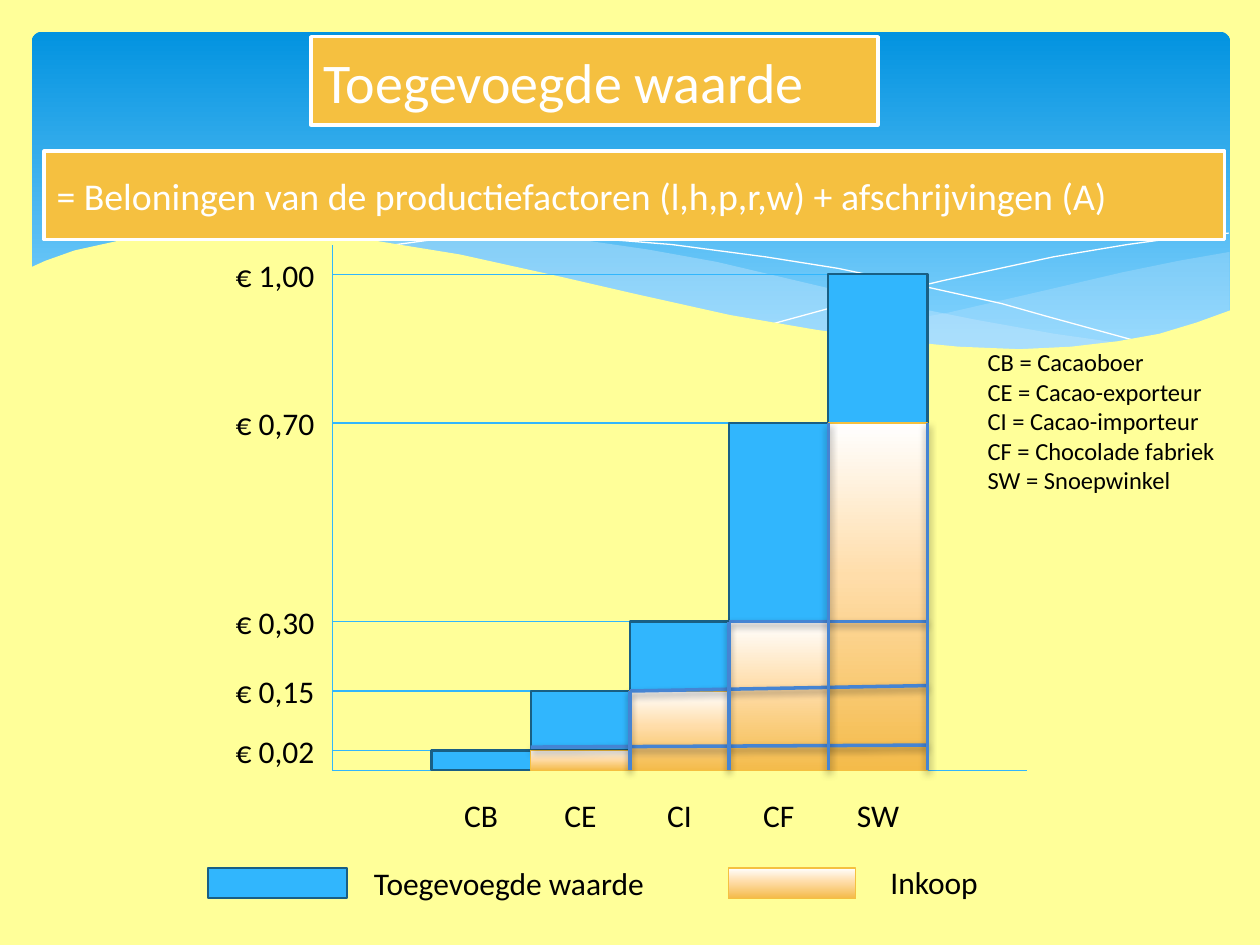
from dataclasses import dataclass

from lxml.etree import SubElement
from pptx import Presentation
from pptx.dml.color import RGBColor
from pptx.enum.shapes import MSO_CONNECTOR, MSO_SHAPE
from pptx.enum.text import MSO_ANCHOR, PP_ALIGN
from pptx.oxml.ns import qn
from pptx.util import Cm, Pt


@dataclass(frozen=True)
class Theme:
    font: str = "Calibri"
    paper: str = "FFFF99"
    white: str = "FFFFFF"
    black: str = "000000"
    banner: str = "F5C040"
    added: str = "31B6FD"
    added_edge: str = "195F84"
    divider: str = "4584D3"
    wave: str = "C6E7FC"
    sky: tuple = ((0, "0293E0"), (90, "83D3FE"))
    purchase: tuple = ((0, "FFFFFF"), (44, "FFDDAA"), (100, "F4BB4A"))
    title_size: float = 32
    definition_size: float = 21.6
    label_size: float = 18
    key_size: float = 14


class SlideBuilder:
    """Draws styled elements on one slide; all lengths are in centimetres."""

    def __init__(self, slide, theme):
        self.slide = slide
        self.theme = theme
        slide.background.fill.solid()
        slide.background.fill.fore_color.rgb = RGBColor.from_string(theme.paper)

    def paint(self, shape, fill=None, edge=None, width=0.75, alpha=None):
        """Apply a plain colour or a tuple of gradient stops, and an outline."""
        shape.shadow.inherit = False
        if fill is None:
            shape.fill.background()
        elif isinstance(fill, tuple):
            shape.fill.gradient()
            shape.fill.gradient_angle = 270
            stops = shape._element.spPr.find(".//" + qn("a:gsLst"))
            for stop in list(stops):
                stops.remove(stop)
            for position, color in fill:
                stop = SubElement(stops, qn("a:gs"), pos=str(position * 1000))
                SubElement(stop, qn("a:srgbClr"), val=color)
        else:
            shape.fill.solid()
            shape.fill.fore_color.rgb = RGBColor.from_string(fill)
            if alpha is not None:
                color = shape._element.spPr.find(".//" + qn("a:srgbClr"))
                SubElement(color, qn("a:alpha"), val=str(alpha * 1000))
        if edge is None:
            shape.line.fill.background()
        else:
            shape.line.color.rgb = RGBColor.from_string(edge)
            shape.line.width = Pt(width)

    def box(self, left, top, width, height, fill, edge=None, weight=0.75,
            kind=MSO_SHAPE.RECTANGLE):
        shape = self.slide.shapes.add_shape(
            kind, Cm(left), Cm(top), Cm(width), Cm(height))
        self.paint(shape, fill, edge, weight)
        return shape

    def added_box(self, left, top, width, height):
        self.box(left, top, width, height,
                 self.theme.added, self.theme.added_edge, 1.25)

    def purchase_box(self, left, top, width, height):
        self.box(left, top, width, height,
                 self.theme.purchase, self.theme.banner)

    def curve(self, points, closed=True, **style):
        (left, top), *rest = [(Cm(x), Cm(y)) for x, y in points]
        builder = self.slide.shapes.build_freeform(left, top)
        builder.add_line_segments(rest, close=closed)
        self.paint(builder.convert_to_shape(), **style)

    def line(self, x1, y1, x2, y2, color, width=0.75, shadow=False):
        connector = self.slide.shapes.add_connector(
            MSO_CONNECTOR.STRAIGHT, Cm(x1), Cm(y1), Cm(x2), Cm(y2))
        connector.line.color.rgb = RGBColor.from_string(color)
        connector.line.width = Pt(width)
        effects = SubElement(connector._element.spPr, qn("a:effectLst"))
        if shadow:
            outer = SubElement(
                effects, qn("a:outerShdw"), blurRad=str(Pt(4)),
                dist=str(Pt(2)), dir="5400000", rotWithShape="0")
            tint = SubElement(outer, qn("a:srgbClr"), val=self.theme.black)
            SubElement(tint, qn("a:alpha"), val="38000")

    def divider(self, x1, y1, x2, y2):
        self.line(x1, y1, x2, y2, self.theme.divider, 2, shadow=True)

    def set_text(self, frame, lines, size, color, align=PP_ALIGN.LEFT):
        frame.word_wrap = True
        frame.text = "\n".join(lines)
        for paragraph in frame.paragraphs:
            paragraph.alignment = align
            paragraph.font.name = self.theme.font
            paragraph.font.size = Pt(size)
            paragraph.font.color.rgb = RGBColor.from_string(color)

    def text(self, left, top, width, height, *lines, size=None,
             align=PP_ALIGN.LEFT):
        label = self.slide.shapes.add_textbox(
            Cm(left), Cm(top), Cm(width), Cm(height))
        self.set_text(label.text_frame, lines, size or self.theme.label_size,
                      self.theme.black, align)

    def banner(self, left, top, width, height, words, size):
        shape = self.box(left, top, width, height,
                         self.theme.banner, self.theme.white, 2)
        shape.text_frame.vertical_anchor = MSO_ANCHOR.MIDDLE
        self.set_text(shape.text_frame, [words], size, self.theme.white)


RIGHT_WAVE = [
    (24.78, 5.08), (23.75, 5.26), (22.63, 5.49), (21.13, 5.84), (19.13, 6.3),
    (16.79, 6.73), (17.91, 6.88), (18.92, 6.99), (20.4, 7.06), (21.69, 7.01),
    (22.78, 6.86), (23.75, 6.65), (24.46, 6.4), (24.79, 6.27), (24.79, 5.08)]
MIDDLE_WAVE = [
    (22.68, 6.93), (21.26, 6.73), (19.69, 6.45), (17.93, 6.1), (15.98, 5.64),
    (14.45, 5.28), (13.06, 5.03), (11.81, 4.85), (10.67, 4.75), (9.17, 4.7),
    (7.95, 4.78), (7.26, 4.85), (8.69, 5.05), (10.26, 5.36), (11.4, 5.64),
    (13.46, 6.1), (15.27, 6.48), (16.89, 6.76), (18.34, 6.96), (19.63, 7.04),
    (20.78, 7.06), (21.77, 7.04)]
FALLING_STREAK = [
    (7.85, 4.95), (8.74, 4.83), (10.19, 4.75), (11.91, 4.8), (13.54, 4.93),
    (15.44, 5.18), (16.89, 5.41), (18.47, 5.74), (20.19, 6.12), (21.11, 6.38),
    (23.04, 6.91)]
RISING_STREAK = [
    (15.57, 6.53), (17.07, 6.12), (19, 5.66), (21.23, 5.18), (22.73, 4.93),
    (23.83, 4.78), (24.77, 4.7)]
PAPER_EDGE = [
    (24.82, 6.25), (24.13, 6.5), (23.37, 6.73), (22.53, 6.88), (21.59, 6.99),
    (20.55, 7.04), (19.33, 6.99), (17.98, 6.86), (16.46, 6.65), (14.71, 6.35),
    (12.78, 5.92), (11.35, 5.59), (9.27, 5.13), (7.42, 4.83), (5.84, 4.7),
    (4.5, 4.67), (3.35, 4.72), (2.41, 4.85), (1.5, 5.05), (0.91, 5.26),
    (0.58, 5.41), (0.58, 8.36), (24.82, 8.36)]

# Stage, price label and height of the price level above the base line
STAGES = [("CB", "€ 0,02", 0.4), ("CE", "€ 0,15", 1.6), ("CI", "€ 0,30", 3),
          ("CF", "€ 0,70", 7), ("SW", "€ 1,00", 10)]
AXIS_X, BASE_Y = 6.7, 15.53
FIRST_BAR, BAR_WIDTH = 8.7, 2
BARS_END = FIRST_BAR + len(STAGES) * BAR_WIDTH


def draw_backdrop(page):
    theme = page.theme
    sky = page.box(0.64, 0.64, 24.16, 6.86, theme.sky,
                   kind=MSO_SHAPE.ROUNDED_RECTANGLE)
    sky.adjustments[0] = 0.03
    page.curve(RIGHT_WAVE, fill=theme.wave, alpha=29)
    page.curve(MIDDLE_WAVE, fill=theme.wave, alpha=40)
    for streak in (FALLING_STREAK, RISING_STREAK):
        page.curve(streak, closed=False, edge=theme.white, width=0)
    page.curve(PAPER_EDGE, fill=theme.paper)


def draw_value_chain(page):
    """Stack each stage's added value on the purchase price it paid."""
    color = page.theme.added
    page.line(AXIS_X, BASE_Y, AXIS_X, 4.93, color)
    page.line(AXIS_X, BASE_Y, 20.7, BASE_Y, color)
    for _, price, level in STAGES:
        y = BASE_Y - level
        page.line(AXIS_X, y, BARS_END, y, color)
        page.text(4.5, y - 0.5, 2.2, 1.02, price)

    purchase = 0
    for index, (stage, _, level) in enumerate(STAGES):
        left = FIRST_BAR + index * BAR_WIDTH
        page.added_box(left, BASE_Y - level, BAR_WIDTH, level - purchase)
        if purchase:
            page.purchase_box(left, BASE_Y - purchase, BAR_WIDTH, purchase)
        page.text(left, 15.93, BAR_WIDTH, 1.02, stage, align=PP_ALIGN.CENTER)
        purchase = level

    for start, y1, y2 in ((10.7, 15.06, 15.02), (12.7, 13.93, 13.82),
                          (14.7, 12.53, 12.53)):
        page.divider(start, y1, BARS_END, y2)
    for x, level in ((12.7, 1.6), (14.7, 3), (16.7, 7), (BARS_END, 7)):
        page.divider(x, BASE_Y - level, x, BASE_Y)


def draw_legend(page):
    page.added_box(4.19, 17.5, 2.8, 0.61)
    page.purchase_box(14.68, 17.5, 2.57, 0.61)
    page.text(7.29, 17.3, 7.2, 1.02, "Toegevoegde waarde")
    page.text(17.7, 17.27, 3.2, 1.02, "Inkoop")
    page.text(19.66, 6.88, 5.44, 3.25, "CB = Cacaoboer",
              "CE = Cacao-exporteur", "CI = Cacao-importeur",
              "CF = Chocolade fabriek", "SW = Snoepwinkel",
              size=page.theme.key_size)


def main():
    deck = Presentation()
    deck.slide_width, deck.slide_height = Cm(25.4), Cm(19.05)
    theme = Theme()
    page = SlideBuilder(deck.slides.add_slide(deck.slide_layouts[6]), theme)
    draw_backdrop(page)
    page.banner(6.27, 0.74, 11.43, 1.78, "Toegevoegde waarde",
                theme.title_size)
    draw_value_chain(page)
    draw_legend(page)
    page.banner(0.89, 3.05, 23.8, 1.78,
                "= Beloningen van de productiefactoren (l,h,p,r,w)"
                " + afschrijvingen (A)", theme.definition_size)
    deck.save("out.pptx")


if __name__ == "__main__":
    main()
